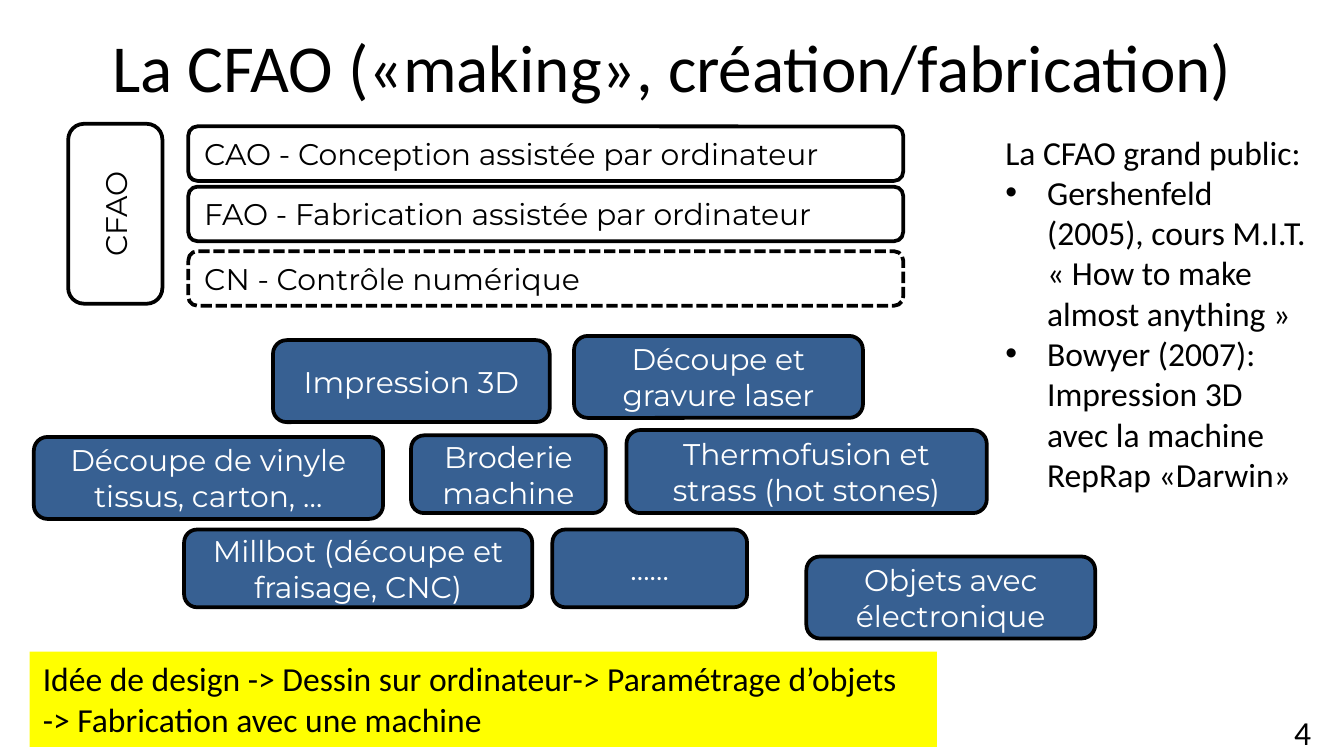
import pptx
import pptx.dml.color
import pptx.enum.dml
import pptx.enum.shapes
import pptx.enum.text
import pptx.oxml.ns
import pptx.util
from lxml import etree

Cm = pptx.util.Cm
ALIGN = pptx.enum.text.PP_ALIGN
ANCHOR = pptx.enum.text.MSO_ANCHOR
COLORS = {
    name: pptx.dml.color.RGBColor.from_string(value)
    for name, value in {
        "black": "000000",
        "white": "FFFFFF",
        "blue": "376092",
        "yellow": "FFFF00",
    }.items()
}
FORMATS = {
    "title": {"name": "Calibri", "size": pptx.util.Pt(36)},
    "body": {"name": "Calibri", "size": pptx.util.Pt(18)},
    "box": {"name": "Montserrat", "size": pptx.util.Pt(16)},
}


def write_text(shape, text, style, color="black", align=ALIGN.LEFT, anchor=ANCHOR.TOP):
    frame = shape.text_frame
    frame.word_wrap = True
    frame.vertical_anchor = anchor
    frame.text = text
    for paragraph in frame.paragraphs:
        paragraph.alignment = align
        for attribute, value in FORMATS[style].items():
            for run in paragraph.runs:
                setattr(run.font, attribute, value)
                run.font.color.rgb = COLORS[color]


def add_box(text, position, fill, color, align):
    box = slide.shapes.add_shape(
        pptx.enum.shapes.MSO_SHAPE.ROUNDED_RECTANGLE, *map(Cm, position))
    box.shadow.inherit = False
    box.fill.solid()
    box.fill.fore_color.rgb = COLORS[fill]
    box.line.color.rgb = COLORS["black"]
    box.line.width = pptx.util.Pt(2)
    write_text(box, text, "box", color, align, ANCHOR.MIDDLE)
    return box


presentation = pptx.Presentation()
presentation.slide_width, presentation.slide_height = Cm(25.4), Cm(14.29)
slide = presentation.slides.add_slide(presentation.slide_layouts[5])

# Title
title = slide.shapes.title
title.left, title.top, title.width, title.height = map(Cm, (1.27, 0.36, 22.86, 1.57))
write_text(title, "La CFAO («making», création/fabrication)", "title", align=ALIGN.CENTER)

# CFAO and its stages
cfao = add_box("CFAO", (0.48, 3.15, 3.4, 1.78), "white", "black", ALIGN.CENTER)
cfao.rotation = 270
for text, top in (
    ("CAO - Conception assistée par ordinateur", 2.39),
    ("FAO - Fabrication assistée par ordinateur", 3.53),
    ("CN - Contrôle numérique", 4.75),
):
    stage = add_box(text, (3.56, top, 13.51, 1.03), "white", "black", ALIGN.LEFT)
stage.line.dash_style = pptx.enum.dml.MSO_LINE.SQUARE_DOT  # numerical control is optional

# Fabrication techniques
for text, position in (
    ("Impression 3D", (5.16, 6.43, 5.23, 1.55)),
    ("Découpe et gravure laser", (10.85, 6.35, 5.46, 1.55)),
    ("Découpe de vinyle\vtissus, carton, …", (0.64, 8.26, 6.6, 1.55)),
    ("Broderie machine", (7.77, 8.23, 3.68, 1.47)),
    ("Thermofusion et strass (hot stones)", (11.84, 8.13, 6.81, 1.57)),
    ("Millbot (découpe et fraisage, CNC)", (3.48, 10.01, 6.58, 1.47)),
    ("……", (10.44, 10.01, 3.68, 1.47)),
    ("Objets avec électronique", (15.24, 10.52, 5.46, 1.55)),
):
    add_box(text, position, "blue", "white", ALIGN.CENTER)

# Consumer CFAO, with bullets under the heading
history = slide.shapes.add_textbox(Cm(18.75), Cm(2.36), Cm(6.22), Cm(7.19))
write_text(history, "\n".join((
    "La CFAO grand public:",
    "Gershenfeld (2005), cours M.I.T. «\u00a0How to make almost anything\u00a0»",
    "Bowyer (2007): Impression 3D avec la machine RepRap «Darwin»",
)), "body")
for paragraph in history.text_frame.paragraphs[1:]:
    properties = paragraph._p.get_or_add_pPr()
    properties.set("marL", str(Cm(0.79)))
    properties.set("indent", str(-Cm(0.79)))
    bullet_font = etree.SubElement(properties, pptx.oxml.ns.qn("a:buFont"))
    bullet_font.set("typeface", "Arial")
    bullet = etree.SubElement(properties, pptx.oxml.ns.qn("a:buChar"))
    bullet.set("char", "•")

# Workflow summary
workflow = slide.shapes.add_textbox(Cm(0.56), Cm(12.32), Cm(17.15), Cm(1.8))
workflow.fill.solid()
workflow.fill.fore_color.rgb = COLORS["yellow"]
write_text(workflow, "Idée de design -> Dessin sur ordinateur-> Paramétrage d’objets \v"
           "-> Fabrication avec une machine", "body")

# Page number
page_number = slide.shapes.add_textbox(Cm(24.21), Cm(13.34), Cm(0.99), Cm(0.76))
write_text(page_number, "4", "body")

presentation.save("out.pptx")
